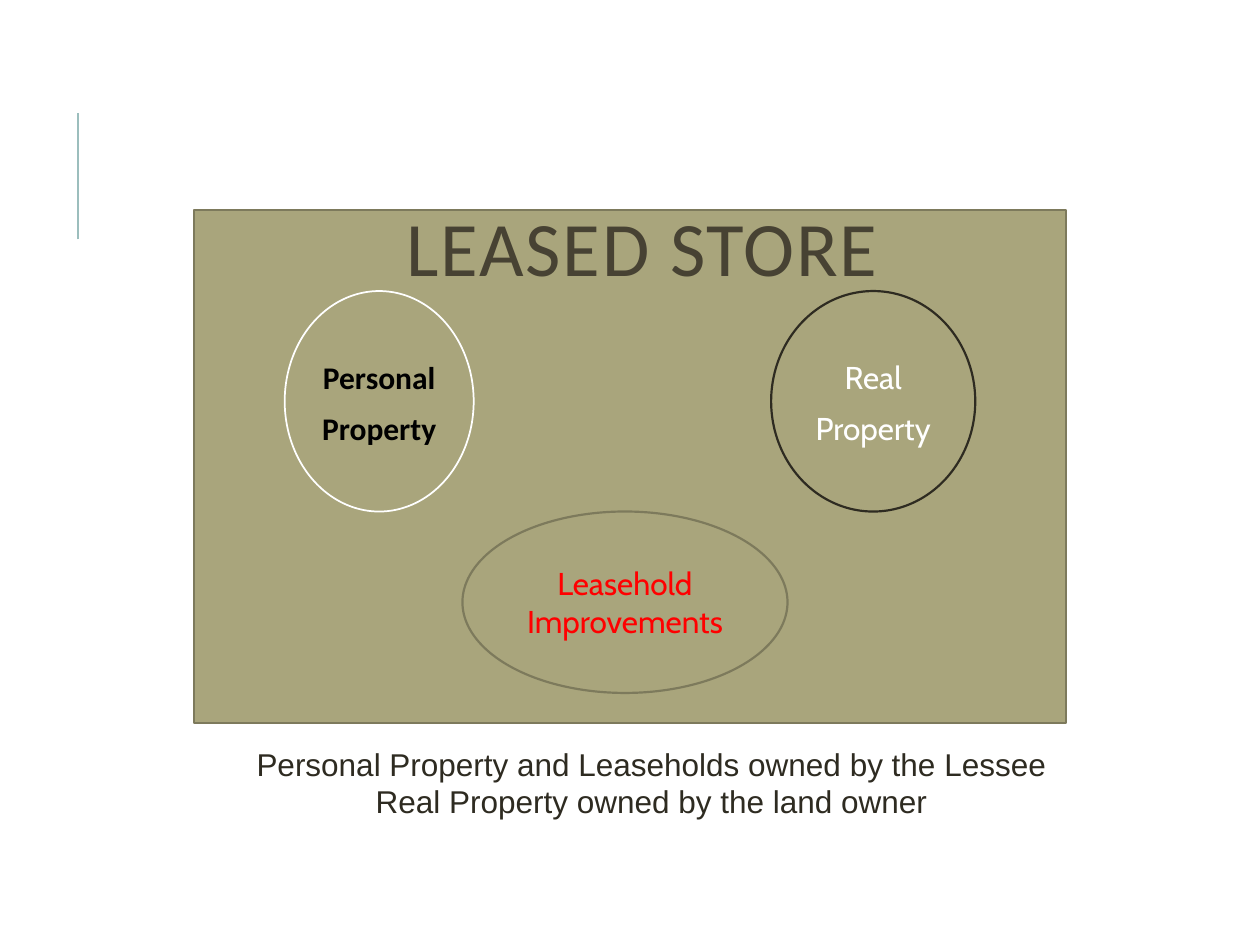
from dataclasses import dataclass

from lxml.etree import SubElement
from pptx import Presentation
from pptx.dml.color import RGBColor
from pptx.enum.shapes import MSO_CONNECTOR, MSO_SHAPE
from pptx.enum.text import MSO_ANCHOR, PP_ALIGN
from pptx.oxml.ns import qn
from pptx.util import Inches, Pt


@dataclass(frozen=True)
class Theme:
    accent: str = "9CBEBD"
    panel: str = "A9A57C"
    outline: str = "7D7A5C"
    dark: str = "2E2B21"
    heading: str = "474233"
    white: str = "FFFFFF"
    black: str = "000000"
    red: str = "FF0000"
    title_size: int = 44
    body_size: int = 18
    title_font: str = "Calibri"
    label_font: str = "Cabin"
    caption_font: str = "Arial"


THEME = Theme()


def color(value):
    return RGBColor.from_string(value)


def write_lines(shape, lines, font, ink, size=THEME.body_size, bold=False,
                spacing=None, after=0, anchor=MSO_ANCHOR.MIDDLE):
    frame = shape.text_frame
    frame.word_wrap = True
    frame.vertical_anchor = anchor
    for index, line in enumerate(lines):
        para = frame.paragraphs[0] if index == 0 else frame.add_paragraph()
        para.alignment = PP_ALIGN.CENTER
        para.space_after = Pt(after)
        if spacing:
            para.line_spacing = spacing
        span = para.add_run()
        span.text = line
        span.font.name = font
        span.font.size = Pt(size)
        span.font.bold = bold
        span.font.color.rgb = color(ink)
    return frame


def add_outlined(page, kind, box, line, weight, fill=None):
    shape = page.shapes.add_shape(kind, *map(Inches, box))
    shape.shadow.inherit = False
    if fill:
        shape.fill.solid()
        shape.fill.fore_color.rgb = color(fill)
    else:
        shape.fill.background()
    shape.line.color.rgb = color(line)
    shape.line.width = Pt(weight)
    return shape


def add_accent(page, box):
    left, top, width, height = box
    rule = page.shapes.add_connector(
        MSO_CONNECTOR.STRAIGHT, Inches(left), Inches(top + height),
        Inches(left + width), Inches(top))
    rule.line.color.rgb = color(THEME.accent)
    rule.line.width = Pt(1.5)
    SubElement(rule._element.spPr, qn("a:effectLst"))


def add_property_circle(page, box, lines, font, ink, line, weight, bold=False):
    circle = add_outlined(page, MSO_SHAPE.FLOWCHART_CONNECTOR, box, line, weight)
    frame = write_lines(circle, lines, font, ink, bold=bold, spacing=1.07, after=6)
    frame.margin_left = frame.margin_right = Inches(0.07)
    frame.margin_top = frame.margin_bottom = Inches(0.04)


def add_store(page, box):
    left, top, width, height = box
    add_outlined(page, MSO_SHAPE.RECTANGLE, box, THEME.outline, 1.25, THEME.panel)
    circle_top = top + 0.64
    add_property_circle(page, (left + 0.72, circle_top, 1.5, 1.75),
                        ["Personal", "Property"], THEME.title_font,
                        THEME.black, THEME.white, 1, bold=True)
    add_property_circle(page, (left + 4.58, circle_top, 1.62, 1.75),
                        ["Real", "Property"], THEME.label_font,
                        THEME.white, THEME.dark, 1.25)
    leasehold = add_outlined(page, MSO_SHAPE.OVAL,
                             (left + 2.13, circle_top + 1.75, 2.58, 1.44),
                             THEME.outline, 1.25, THEME.panel)
    write_lines(leasehold, ["Leasehold", "Improvements"],
                THEME.label_font, THEME.red)


def add_title(page, box):
    title = page.shapes.add_textbox(*map(Inches, box))
    frame = write_lines(title, ["LEASED STORE"], THEME.title_font,
                        THEME.heading, THEME.title_size, spacing=0.8)
    frame.margin_left = Inches(0.4)
    span = frame.paragraphs[0].runs[0]
    span.font._element.set("spc", "100")


def add_caption(page, box):
    caption = page.shapes.add_textbox(*map(Inches, box))
    write_lines(caption, ["Personal Property and Leaseholds owned by the Lessee",
                          "Real Property owned by the land owner"],
                THEME.caption_font, THEME.dark, anchor=MSO_ANCHOR.TOP)


def main():
    deck = Presentation()
    deck.slide_width, deck.slide_height = Inches(10), Inches(7.5)
    page = deck.slides.add_slide(deck.slide_layouts[6])
    add_accent(page, (0.62, 0.9, 0, 1))
    add_store(page, (1.54, 1.67, 6.92, 4.07))
    add_title(page, (2.07, 1.47, 5.76, 1.09))
    add_caption(page, (1.17, 5.86, 8, 0.71))
    deck.save("out.pptx")


if __name__ == "__main__":
    main()
